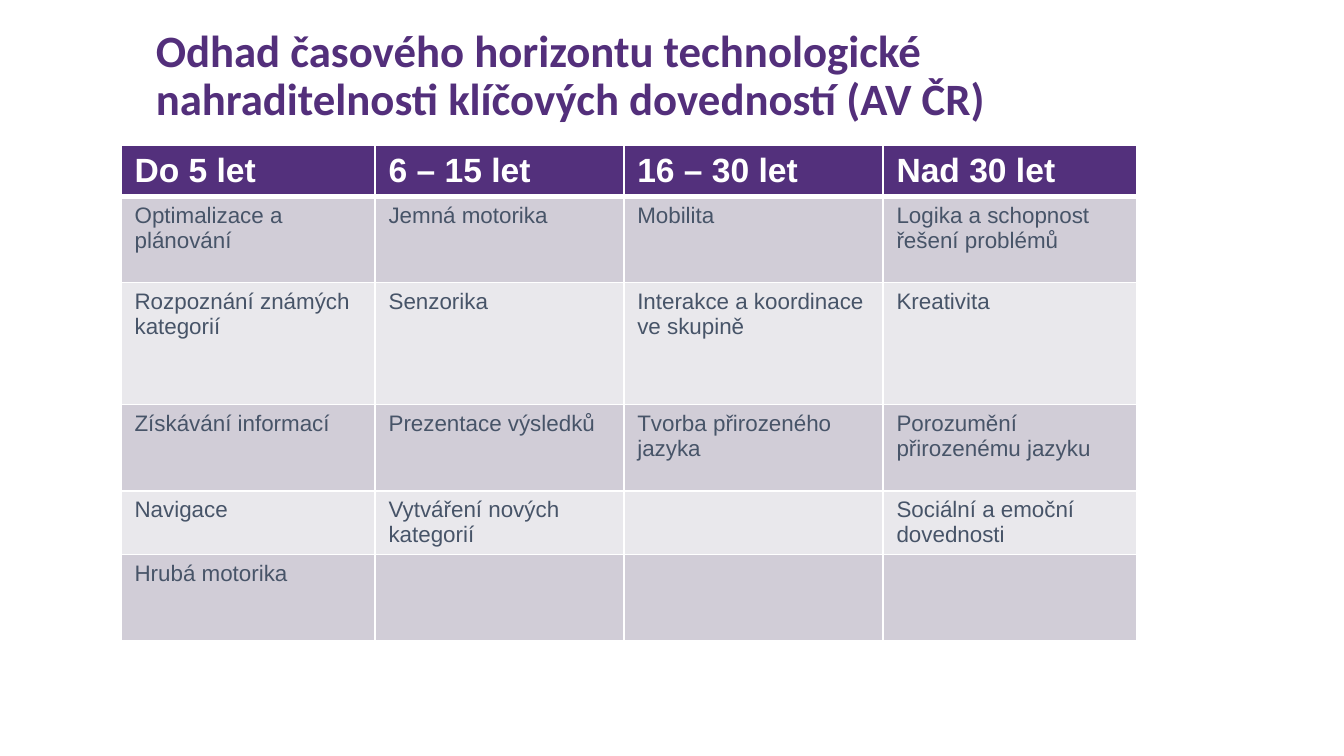
"""Build a slide with a table of when key skills may be replaced by technology."""

from dataclasses import dataclass

from lxml.etree import SubElement
from pptx import Presentation
from pptx.dml.color import RGBColor
from pptx.enum.text import MSO_ANCHOR, PP_ALIGN
from pptx.oxml.ns import qn
from pptx.util import Cm, Pt

WHITE = RGBColor(0xFF, 0xFF, 0xFF)
TITLE_PURPLE = RGBColor(0x53, 0x2F, 0x7B)
HEADER_PURPLE = RGBColor(0x53, 0x30, 0x7C)
DARK_BAND = RGBColor(0xD1, 0xCD, 0xD7)
LIGHT_BAND = RGBColor(0xE9, 0xE8, 0xEC)
SLATE = RGBColor(0x47, 0x54, 0x68)

COLUMN_WIDTHS = (4.8, 4.7, 4.9, 4.8)


@dataclass(frozen=True)
class SkillRow:
    height: float
    texts: tuple[str, str, str, str]


ROWS = (
    SkillRow(0.91, ("Do 5 let", "6 – 15 let", "16 – 30 let", "Nad 30 let")),
    SkillRow(1.63, ("Optimalizace a plánování", "Jemná motorika", "Mobilita",
                    "Logika a schopnost řešení problémů")),
    SkillRow(2.31, ("Rozpoznání známých kategorií", "Senzorika",
                    "Interakce a koordinace ve skupině", "Kreativita")),
    SkillRow(1.63, ("Získávání informací", "Prezentace výsledků",
                    "Tvorba přirozeného jazyka", "Porozumění přirozenému jazyku")),
    SkillRow(0.91, ("Navigace", "Vytváření nových kategorií", "",
                    "Sociální a emoční dovednosti")),
    SkillRow(1.63, ("Hrubá motorika", "", "", "")),
)


def write_text(frame, text: str, *, size: float, color: RGBColor,
               font: str = "Arial", bold: bool = False, line_spacing: float = 1.0) -> None:
    para = frame.paragraphs[0]
    para.alignment = PP_ALIGN.LEFT
    para.line_spacing = line_spacing
    span = para.add_run()
    span.text = text
    span.font.name = font
    span.font.size = Pt(size)
    span.font.bold = bold
    span.font.color.rgb = color


def draw_border(cell, side: str, width: float) -> None:
    properties = cell._tc.get_or_add_tcPr()
    line = SubElement(properties, qn(f"a:ln{side}"), w=str(Pt(width)))
    fill = SubElement(line, qn("a:solidFill"))
    SubElement(fill, qn("a:srgbClr"), val=str(WHITE))


def format_cell(cell, text: str, row_number: int) -> None:
    is_header = row_number == 0
    for side in "LRTB":
        under_header = (row_number, side) in ((0, "B"), (1, "T"))
        draw_border(cell, side, 3 if under_header else 1)
    cell.fill.solid()
    if is_header:
        cell.fill.fore_color.rgb = HEADER_PURPLE
    else:
        cell.fill.fore_color.rgb = DARK_BAND if row_number % 2 else LIGHT_BAND
    if text:
        write_text(cell.text_frame, text, size=18 if is_header else 12,
                   color=WHITE if is_header else SLATE, bold=is_header)


def add_title(page) -> None:
    box = page.shapes.title
    box.left, box.top, box.width, box.height = Cm(2.69), Cm(0.41), Cm(19.2), Cm(2.39)
    box.text_frame.word_wrap = True
    box.text_frame.vertical_anchor = MSO_ANCHOR.TOP
    write_text(box.text_frame,
               "Odhad časového horizontu technologické nahraditelnosti klíčových dovedností (AV ČR)",
               size=24, color=TITLE_PURPLE, font="Calibri", bold=True, line_spacing=0.9)


def add_skill_table(page) -> None:
    table = page.shapes.add_table(
        len(ROWS), len(COLUMN_WIDTHS), Cm(2.29), Cm(2.74),
        Cm(sum(COLUMN_WIDTHS)), Cm(sum(row.height for row in ROWS))).table
    for column, width in zip(table.columns, COLUMN_WIDTHS):
        column.width = Cm(width)
    for row_number, row in enumerate(ROWS):
        table.rows[row_number].height = Cm(row.height)
        for column_number, text in enumerate(row.texts):
            format_cell(table.cell(row_number, column_number), text, row_number)


def main() -> None:
    deck = Presentation()
    deck.slide_width, deck.slide_height = Cm(25.4), Cm(14.29)
    page = deck.slides.add_slide(deck.slide_layouts.get_by_name("Title Only"))
    add_title(page)
    add_skill_table(page)
    deck.save("out.pptx")


if __name__ == "__main__":
    main()
